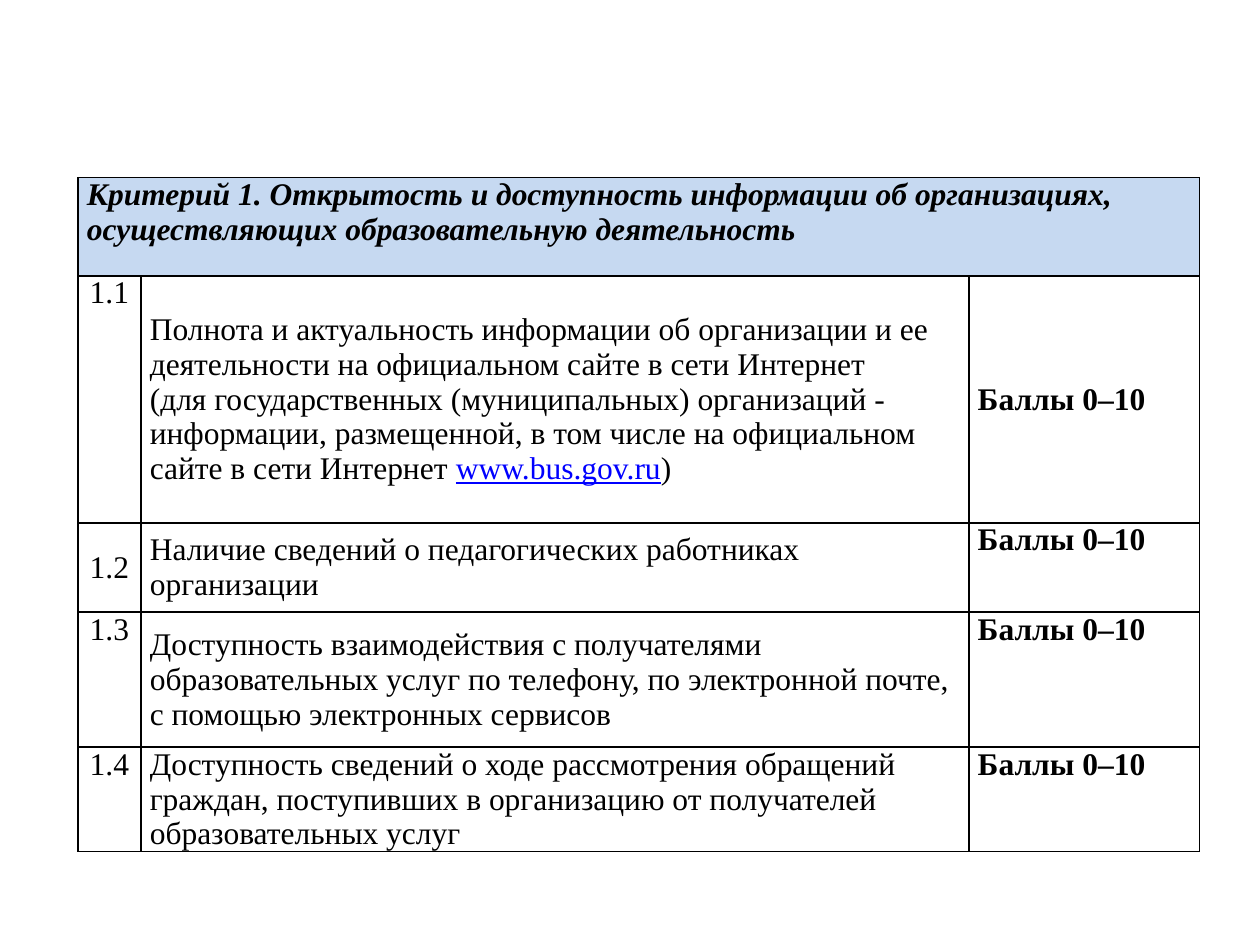
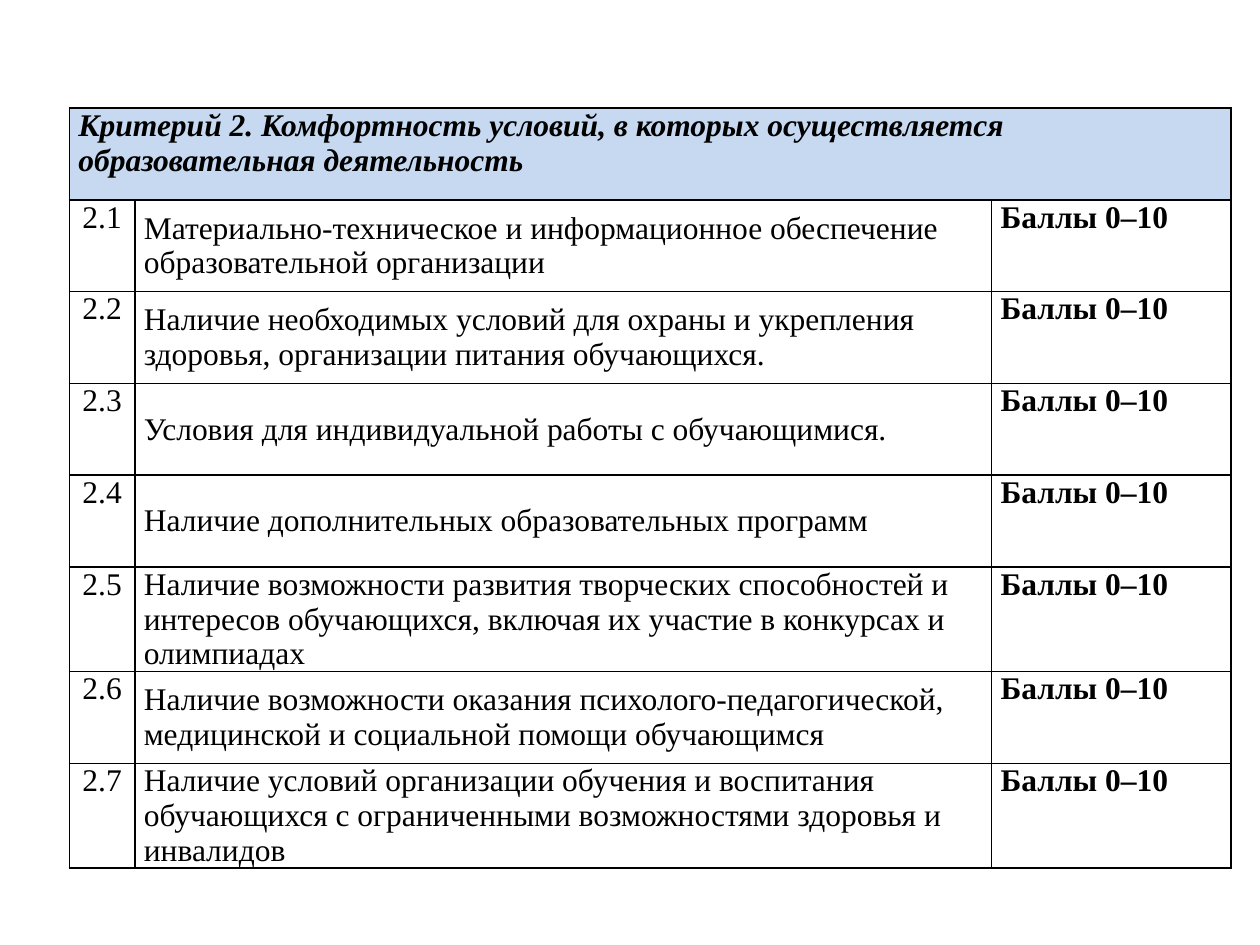
from dataclasses import dataclass

import pptx
import pptx.dml.color
import pptx.enum.text
import pptx.oxml
import pptx.oxml.ns
import pptx.slide
import pptx.table
import pptx.util
from pptx.util import Cm

Align = pptx.enum.text.PP_ALIGN
Anchor = pptx.enum.text.MSO_ANCHOR


@dataclass(frozen=True)
class Theme:
    font: str = "Times New Roman"
    size: int = 18
    ink: str = "000000"
    link: str = "0000FF"
    band: str = "C6D9F1"
    paper: str = "FFFFFF"
    rule: float = 1
    pad: float = 0.18


@dataclass(frozen=True)
class Run:
    text: str
    bold: bool = False
    italic: bool = False
    link: bool = False


@dataclass(frozen=True)
class Item:
    """One rated point: its paragraphs and where its side cells are anchored."""
    paras: list[list[Run]]
    mark: Anchor = Anchor.TOP
    score: Anchor = Anchor.TOP


@dataclass(frozen=True)
class Chart:
    """One criterion table, lengths in centimetres."""
    num: int
    title: str
    left: float
    top: float
    cols: list[float]
    rows: list[float]
    items: list[Item]


THEME = Theme()
SCORE = "Баллы 0–10"


def plain(text: str, **anchors: Anchor) -> Item:
    return Item([[Run(text)]], **anchors)


CHARTS = [
    Chart(
        1, "Открытость и доступность информации об организациях, "
        "осуществляющих образовательную деятельность",
        1.57, 3.58, [1.27, 16.69, 4.65], [1.98, 4.98, 1.8, 2.72, 1.8],
        [
            Item([
                [Run("Полнота и актуальность информации об организации и ее "
                     "деятельности на официальном сайте в сети Интернет")],
                [Run("(для государственных (муниципальных) организаций - "
                     "информации, размещенной, в том числе на официальном "
                     "сайте в сети Интернет "),
                 Run("www.bus.gov.ru", link=True), Run(")")],
            ], score=Anchor.MIDDLE),
            plain("Наличие сведений о педагогических работниках организации",
                  mark=Anchor.MIDDLE),
            plain("Доступность взаимодействия с получателями образовательных "
                  "услуг по телефону, по электронной почте, с помощью "
                  "электронных сервисов"),
            plain("Доступность сведений о ходе рассмотрения обращений граждан, "
                  "поступивших в организацию от получателей образовательных "
                  "услуг"),
        ]),
    Chart(
        2, "Комфортность условий, в которых осуществляется "
        "образовательная деятельность",
        1.4, 2.18, [1.32, 17.27, 4.83], [1.85] * 8,
        [
            plain("Материально-техническое и информационное обеспечение "
                  "образовательной организации"),
            plain("Наличие необходимых условий для охраны и укрепления "
                  "здоровья, организации питания обучающихся."),
            plain("Условия для индивидуальной работы с обучающимися."),
            plain("Наличие дополнительных образовательных программ"),
            plain("Наличие возможности развития творческих способностей и "
                  "интересов обучающихся, включая их участие в конкурсах и "
                  "олимпиадах"),
            plain("Наличие возможности оказания психолого-педагогической, "
                  "медицинской и социальной помощи обучающимся"),
            plain("Наличие условий организации обучения и воспитания "
                  "обучающихся с ограниченными возможностями здоровья и "
                  "инвалидов"),
        ]),
]


def color(code: str) -> pptx.dml.color.RGBColor:
    return pptx.dml.color.RGBColor.from_string(code)


def frame(cell: pptx.table._Cell) -> None:
    """Rule all four sides; the lines must precede the fill in the XML."""
    props = cell._tc.get_or_add_tcPr()
    width = int(pptx.util.Pt(THEME.rule))
    for spot, side in enumerate("LRTB"):
        props.insert(spot, pptx.oxml.parse_xml(
            f'<a:ln{side} {pptx.oxml.ns.nsdecls("a")} w="{width}"><a:solidFill>'
            f'<a:srgbClr val="{THEME.ink}"/></a:solidFill></a:ln{side}>'))


def style(cell: pptx.table._Cell, fill: str | None) -> None:
    if fill:
        cell.fill.solid()
        cell.fill.fore_color.rgb = color(fill)
    else:
        cell.fill.background()
    frame(cell)
    cell.margin_left = cell.margin_right = Cm(THEME.pad)
    cell.margin_top = cell.margin_bottom = 0


def write(cell: pptx.table._Cell, paras: list[list[Run]],
          align: Align = Align.LEFT, anchor: Anchor = Anchor.TOP) -> None:
    cell.vertical_anchor = anchor
    body = cell.text_frame
    for pos, runs in enumerate(paras):
        para = body.add_paragraph() if pos else body.paragraphs[0]
        para.alignment = align
        for part in runs:
            run = para.add_run()
            run.text = part.text
            font = run.font
            font.name, font.size = THEME.font, pptx.util.Pt(THEME.size)
            font.bold, font.italic = part.bold, part.italic
            font.underline = part.link
            font.color.rgb = color(THEME.link if part.link else THEME.ink)


def draw(slide: pptx.slide.Slide, chart: Chart) -> None:
    grid = slide.shapes.add_table(
        len(chart.rows), len(chart.cols), Cm(chart.left), Cm(chart.top),
        Cm(sum(chart.cols)), Cm(sum(chart.rows))).table
    grid.first_row = grid.horz_banding = False
    for col, width in zip(grid.columns, chart.cols):
        col.width = Cm(width)
    for row, height in zip(grid.rows, chart.rows):
        row.height = Cm(height)

    head, *lines = [list(row.cells) for row in grid.rows]
    for cell in head:
        style(cell, THEME.band)
    head[0].merge(head[-1])
    title = f"Критерий {chart.num}. {chart.title}"
    write(head[0], [[Run(title, bold=True, italic=True)]])

    for pos, (cells, item) in enumerate(zip(lines, chart.items), 1):
        for cell, fill in zip(cells, (THEME.paper, None, None)):
            style(cell, fill)
        mark, text, score = cells
        write(mark, [[Run(f"{chart.num}.{pos}")]], Align.CENTER, item.mark)
        write(text, item.paras, anchor=Anchor.MIDDLE)
        write(score, [[Run(SCORE, bold=True)]], Align.JUSTIFY, item.score)


def main() -> None:
    deck = pptx.Presentation()
    deck.slide_width, deck.slide_height = Cm(25.4), Cm(19.05)
    for chart in CHARTS:
        draw(deck.slides.add_slide(deck.slide_layouts[6]), chart)
    deck.save("out.pptx")


if __name__ == "__main__":
    main()
